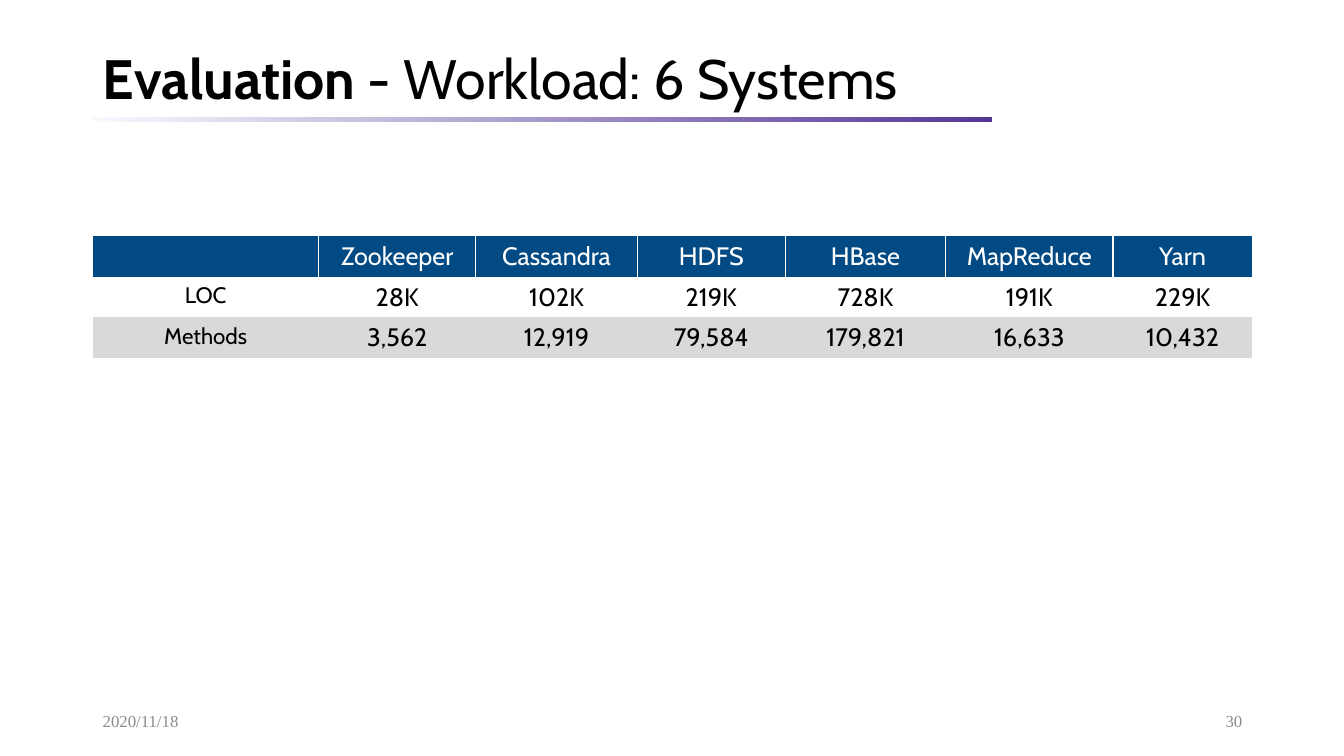
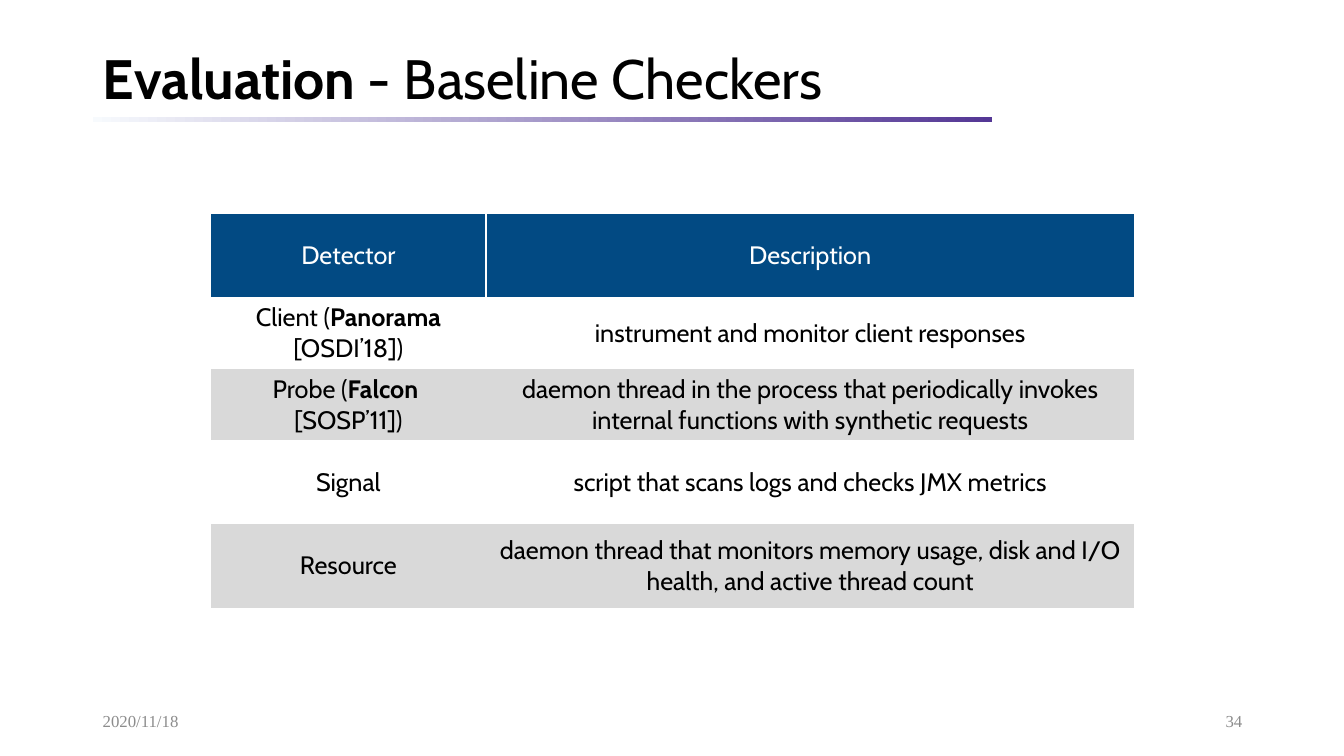
from lxml import etree
from pptx import Presentation
from pptx.dml.color import RGBColor
from pptx.enum.shapes import MSO_SHAPE
from pptx.enum.text import MSO_ANCHOR, PP_ALIGN
from pptx.oxml.ns import qn
from pptx.util import Inches, Pt

LEFT, CENTER, RIGHT = PP_ALIGN.LEFT, PP_ALIGN.CENTER, PP_ALIGN.RIGHT
TOP, MIDDLE = MSO_ANCHOR.TOP, MSO_ANCHOR.MIDDLE
RECTANGLE = MSO_SHAPE.RECTANGLE
TITLE_ONLY = 5
NO_TABLE_STYLE = "{2D5ABB26-0587-4C30-8999-92F81FD0307C}"

BODY_FONT, FOOTER_FONT = "Cabin", "Times New Roman"
BLACK, WHITE, GREY, FOOTER_GREY = "000000", "FFFFFF", "D9D9D9", "8C8C8C"
HEADER_BLUE = "024A83"
RULE_START, RULE_END = "F7FAFD", "543795"

CONTENT_LEFT, CONTENT_WIDTH = 0.92, 11.5
TITLE_BOX = (CONTENT_LEFT, 0.43, CONTENT_WIDTH, 0.75)
RULE_BOX = (CONTENT_LEFT, 1.16, 8.92, 0.05)
FOOTER_BOX = (CONTENT_LEFT, 6.95, CONTENT_WIDTH, 0.4)
FOOTER_PART_WIDTH = 3
DATE = "2020/11/18"


def rgb(color):
    return RGBColor.from_string(color)


def write_text(frame, text, size=18, font=BODY_FONT, color=BLACK,
               align=CENTER, line_spacing=None):
    """Fill a text frame: newlines part paragraphs, ** marks enclose bold."""
    frame.word_wrap = True
    for index, line in enumerate(text.split("\n")):
        paragraph = frame.add_paragraph() if index else frame.paragraphs[0]
        paragraph.alignment = align
        paragraph.line_spacing = line_spacing
        for position, piece in enumerate(line.split("**")):
            if piece:
                run = paragraph.add_run()
                run.text = piece
                run.font.size = Pt(size)
                run.font.name = font
                run.font.bold = position % 2 == 1
                run.font.color.rgb = rgb(color)


def add_title(slide, text, box):
    title = slide.shapes.title
    title.left, title.top, title.width, title.height = map(Inches, box)
    title.text_frame.vertical_anchor = MIDDLE
    write_text(title.text_frame, text, size=39.6, align=LEFT, line_spacing=0.9)


def add_title_rule(slide, box):
    rule = slide.shapes.add_shape(RECTANGLE, *map(Inches, box))
    rule.shadow.inherit = False
    rule.line.fill.background()
    rule.fill.gradient()
    rule.fill.gradient_angle = 0
    for stop, color in zip(rule.fill.gradient_stops, (RULE_START, RULE_END)):
        stop.color.rgb = rgb(color)


def add_footer(slide, number, box):
    left, top, width, height = box
    number_left = left + width - FOOTER_PART_WIDTH
    for part_left, text, align in ((left, DATE, LEFT),
                                   (number_left, str(number), RIGHT)):
        part = slide.shapes.add_textbox(Inches(part_left), Inches(top),
                                        Inches(FOOTER_PART_WIDTH), Inches(height))
        part.text_frame.vertical_anchor = MIDDLE
        write_text(part.text_frame, text, size=12, font=FOOTER_FONT,
                   color=FOOTER_GREY, align=align)


def add_header_borders(cell):
    properties = cell._tc.get_or_add_tcPr()
    for index, side in enumerate(("a:lnL", "a:lnR", "a:lnT")):
        line = etree.Element(qn(side), w=str(Pt(1)))
        fill = etree.SubElement(line, qn("a:solidFill"))
        etree.SubElement(fill, qn("a:srgbClr"), val=WHITE)
        properties.insert(index, line)


def add_striped_table(slide, rows, position, widths, heights, anchor, label_size=18):
    """Add a table with a blue header row; label_size is for the first column."""
    left, top = position
    frame = slide.shapes.add_table(
        len(rows), len(widths), Inches(left), Inches(top),
        Inches(sum(widths)), Inches(sum(heights)))
    table = frame.table
    for style in frame._element.iter(qn("a:tableStyleId")):
        style.text = NO_TABLE_STYLE
    for column, width in zip(table.columns, widths):
        column.width = Inches(width)
    for row_index, (texts, height) in enumerate(zip(rows, heights)):
        table.rows[row_index].height = Inches(height)
        is_header = row_index == 0
        fill = HEADER_BLUE if is_header else (GREY, WHITE)[row_index % 2]
        for column_index, text in enumerate(texts):
            cell = table.cell(row_index, column_index)
            cell.vertical_anchor = anchor
            cell.fill.solid()
            cell.fill.fore_color.rgb = rgb(fill)
            is_label = column_index == 0 and not is_header
            write_text(cell.text_frame, text, size=label_size if is_label else 18,
                       color=WHITE if is_header else BLACK)
            if is_header:
                add_header_borders(cell)


def add_evaluation_slide(presentation, topic, number):
    slide = presentation.slides.add_slide(presentation.slide_layouts[TITLE_ONLY])
    add_title_rule(slide, RULE_BOX)
    add_title(slide, f"**Evaluation **- {topic}", TITLE_BOX)
    add_footer(slide, number, FOOTER_BOX)
    return slide


def build_workload_slide(presentation):
    slide = add_evaluation_slide(presentation, "Workload: 6 Systems", 30)
    rows = [
        ("", "Zookeeper", "Cassandra", "HDFS", "HBase", "MapReduce", "Yarn"),
        ("LOC", "28K", "102K", "219K", "728K", "191K", "229K"),
        ("Methods", "3,562", "12,919", "79,584", "179,821", "16,633", "10,432"),
    ]
    add_striped_table(slide, rows, (CONTENT_LEFT, 2.34),
                      widths=(2.24, 1.56, 1.6, 1.47, 1.59, 1.66, 1.38),
                      heights=[0.405] * len(rows), anchor=TOP, label_size=16)


def build_checkers_slide(presentation):
    slide = add_evaluation_slide(presentation, "Baseline Checkers", 34)
    rows = [
        ("Detector", "Description"),
        ("Client (**Panorama **[OSDI’18])", "instrument and monitor client responses"),
        ("Probe (**Falcon **\n[SOSP’11])",
         "daemon thread in the process that periodically invokes "
         "internal functions with synthetic requests"),
        ("Signal", "script that scans logs and checks JMX metrics"),
        ("Resource",
         "daemon thread that monitors memory usage, disk and I/O health, "
         "and active thread count"),
    ]
    add_striped_table(slide, rows, (2.09, 2.12), widths=(2.73, 6.43),
                      heights=(0.83, 0.71, 0.71, 0.83, 0.83), anchor=MIDDLE)


def main():
    presentation = Presentation()
    presentation.slide_width = Inches(13.33)
    presentation.slide_height = Inches(7.5)
    build_workload_slide(presentation)
    build_checkers_slide(presentation)
    presentation.save("out.pptx")


if __name__ == "__main__":
    main()
